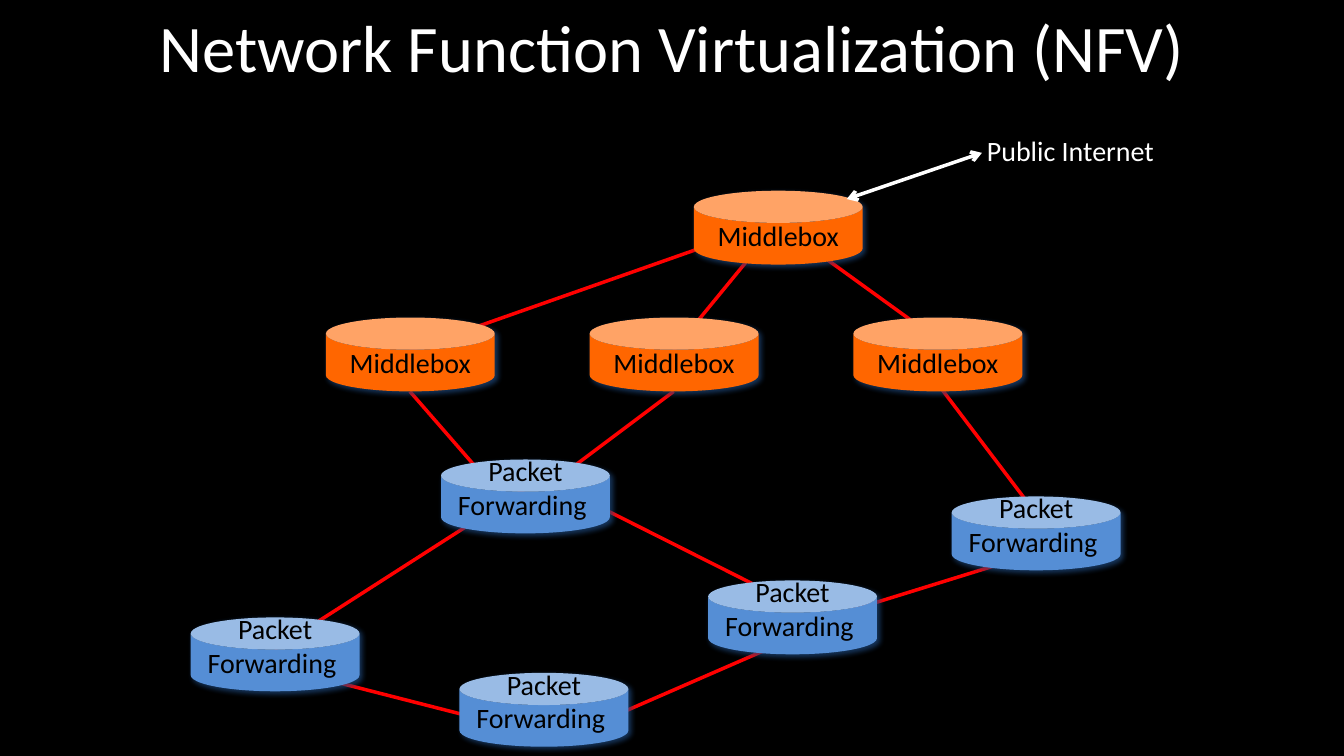
from dataclasses import dataclass

from lxml.etree import SubElement
from pptx import Presentation
from pptx.dml.color import RGBColor
from pptx.enum.shapes import MSO_CONNECTOR, MSO_SHAPE
from pptx.enum.text import MSO_ANCHOR, PP_ALIGN
from pptx.oxml.ns import qn
from pptx.util import Inches, Pt


@dataclass(frozen=True)
class Theme:
    font: str = "Calibri"
    title_size: float = 57
    label_size: float = 24
    line_width: float = 3
    background: str = "000000"
    light: str = "FFFFFF"
    dark: str = "000000"
    link: str = "FF0000"
    middlebox: str = "FF6600"
    forwarding: str = "558ED5"
    glow: str = "1F497D"


theme = Theme()
deck = Presentation()
deck.slide_width, deck.slide_height = Inches(16), Inches(9)
column, row = deck.slide_width / 16, deck.slide_height / 9
page = deck.slides.add_slide(deck.slide_layouts[5])
page.background.fill.solid()
page.background.fill.fore_color.rgb = RGBColor.from_string(theme.background)


def write(frame, lines, size, color, align):
    for index, line in enumerate(lines):
        para = frame.paragraphs[0] if index == 0 else frame.add_paragraph()
        para.alignment = align
        span = para.add_run()
        span.text = line
        settings = {"name": theme.font, "size": Pt(size)}
        for name, value in settings.items():
            setattr(span.font, name, value)
        span.font.color.rgb = RGBColor.from_string(color)


def connect(start, end, color):
    ends = [round(share * unit) for point in (start, end)
            for share, unit in zip(point, (column, row))]
    connector = page.shapes.add_connector(MSO_CONNECTOR.STRAIGHT, *ends)
    connector.line.width = Pt(theme.line_width)
    connector.line.color.rgb = RGBColor.from_string(color)
    SubElement(connector._element.spPr, qn("a:effectLst"))
    return connector


title = page.shapes.title
title_box = {"left": 0.8 * column, "top": -0.2 * row,
             "width": 14.4 * column, "height": 1.5 * row}
for name, value in title_box.items():
    setattr(title, name, round(value))
title.text_frame.vertical_anchor = MSO_ANCHOR.MIDDLE
write(title.text_frame, ["Network Function Virtualization (NFV)"],
      theme.title_size, theme.light, PP_ALIGN.CENTER)

# Links lie behind the nodes
links = [
    ((3.27, 7.73), (6.25, 5.82)),
    ((7.03, 5.98), (8.96, 6.95)),
    ((7.18, 8.58), (9.43, 7.6)),
    ((3.06, 7.88), (5.8, 8.58)),
    ((10.08, 7.28), (12.18, 6.63)),
    ((5.89, 5.82), (4.88, 4.66)),
    ((6.74, 5.62), (8.02, 4.66)),
    ((12.33, 6.11), (11.08, 4.46)),
    ((8.69, 2.83), (4.88, 4.17)),
    ((9.12, 2.83), (8.02, 4.17)),
    ((9.68, 2.97), (11.16, 4.04)),
]
for start, end in links:
    connect(start, end, theme.link)

# The negative top margin raises the two-line label so its second line sits on the can's front
node_kinds = [
    (["Packet", "Forwarding "], theme.forwarding, -0.34,
     [(2.27, 7.35), (5.47, 8.01), (8.43, 6.91), (5.25, 5.47), (11.33, 5.91)]),
    (["Middlebox"], theme.middlebox, 0.07,
     [(3.88 + 3.14 * index, 3.78) for index in range(3)] + [(8.26, 2.27)]),
]
for label, color, margin_top, places in node_kinds:
    for left, top in places:
        node = page.shapes.add_shape(
            MSO_SHAPE.CAN, round(left * column), round(top * row),
            round(2.01 * column), round(0.88 * row))
        node.adjustments[0] = 0.436
        node.fill.solid()
        node.fill.fore_color.rgb = RGBColor.from_string(color)
        node.line.fill.background()
        node.shadow.inherit = False
        effects = node._element.spPr.find(qn("a:effectLst"))
        shadow = SubElement(effects, qn("a:outerShdw"), blurRad=str(Pt(5)),
                            dist=str(Pt(3)), dir=str(45 * 60000), rotWithShape="0")
        tint = SubElement(shadow, qn("a:srgbClr"), val=theme.glow)
        SubElement(tint, qn("a:alpha"), val="75000")
        frame = node.text_frame
        layout = {"word_wrap": False, "vertical_anchor": MSO_ANCHOR.MIDDLE,
                  "margin_left": Inches(0.14), "margin_right": Inches(0.14),
                  "margin_top": Inches(margin_top), "margin_bottom": Inches(0.07)}
        for name, value in layout.items():
            setattr(frame, name, value)
        write(frame, label, theme.label_size, theme.dark, PP_ALIGN.CENTER)

uplink = connect((10.08, 2.37), (11.69, 1.82), theme.light)
for arrowhead in ("a:headEnd", "a:tailEnd"):
    SubElement(uplink.line._get_or_add_ln(), qn(arrowhead), type="arrow")

internet = page.shapes.add_textbox(round(11.65 * column), round(1.54 * row),
                                   round(2.22 * column), round(0.91 * row))
internet.text_frame.word_wrap = False
write(internet.text_frame, ["Public Internet"], theme.label_size, theme.light, PP_ALIGN.LEFT)

deck.save("out.pptx")
